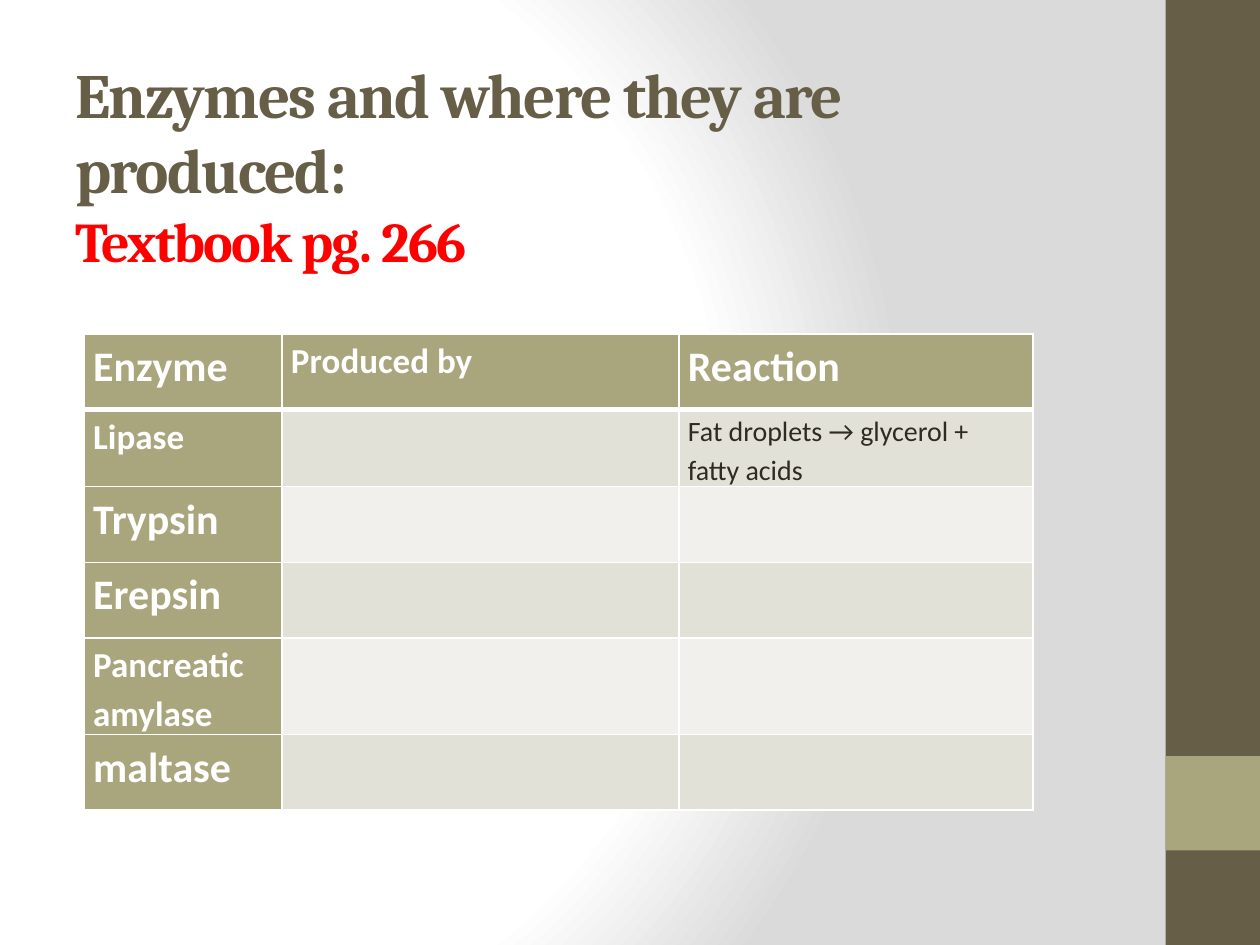
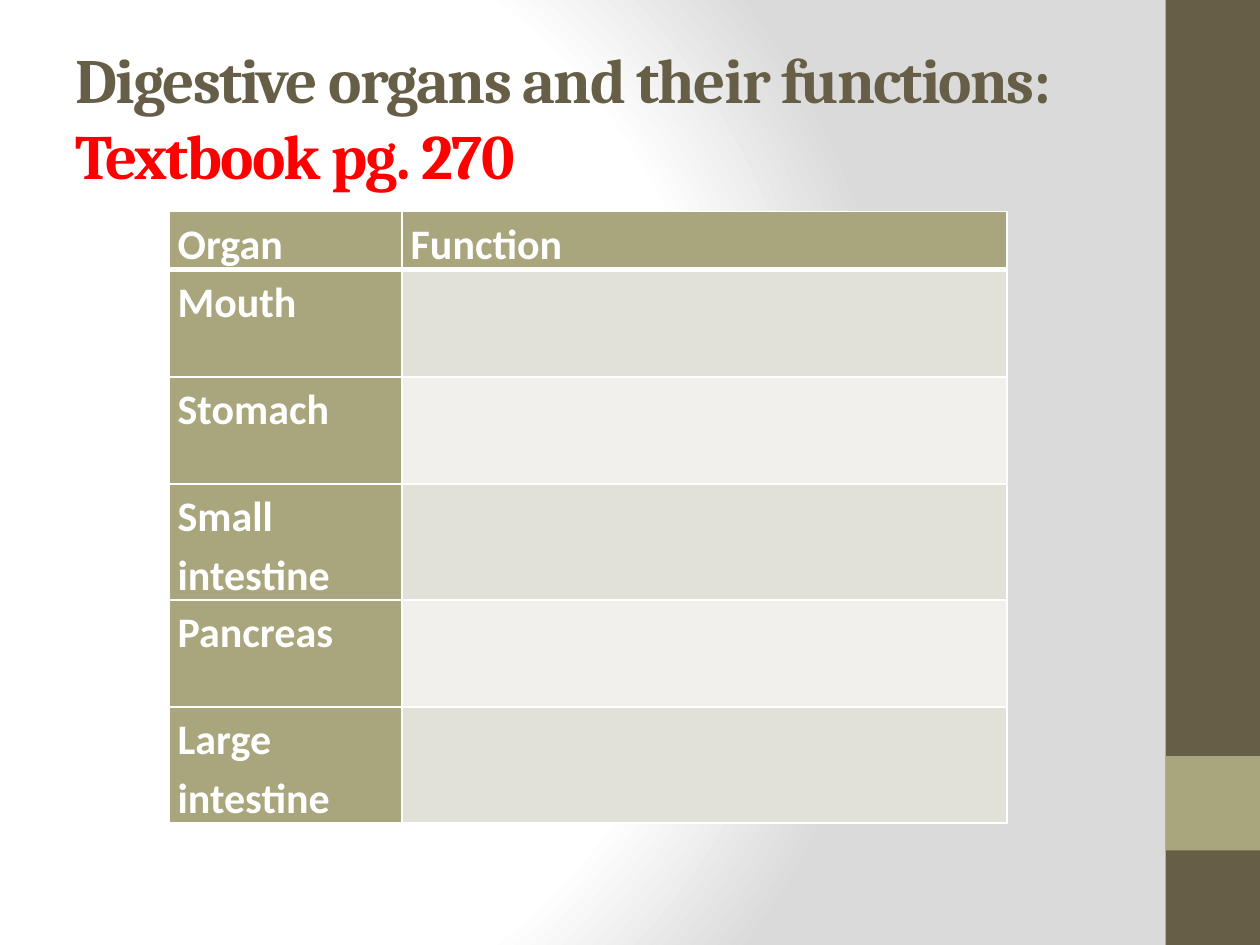
"""Build two worksheet slides about digestive enzymes and organs."""
from dataclasses import dataclass, field

import pptx
import pptx.dml.color
import pptx.enum.shapes
import pptx.enum.text
import pptx.oxml
import pptx.oxml.ns
import pptx.presentation
import pptx.slide
import pptx.table
import pptx.text.text
import pptx.util

RGBColor = pptx.dml.color.RGBColor

GRID_COLUMNS, GRID_ROWS = 40, 30
GRID_UNIT = pptx.util.Inches(0.25)

BROWN = RGBColor(0x67, 0x5E, 0x47)
OLIVE = RGBColor(0xA9, 0xA5, 0x7C)
RED = RGBColor(0xFF, 0x00, 0x00)
WHITE = RGBColor(0xFF, 0xFF, 0xFF)
GREY = RGBColor(0xDA, 0xDA, 0xDA)
INK = RGBColor(0x2F, 0x2B, 0x20)
ROW_FILLS = (RGBColor(0xE2, 0xE1, 0xD7), RGBColor(0xF1, 0xF0, 0xEC))

TITLE_FONT, TABLE_FONT = "Cambria", "Calibri"
HEADING_SIZE, TABLE_SIZE = 36, 24
THIN_BORDER, THICK_BORDER = 1, 3


@dataclass(frozen=True)
class Band:
    """A rectangle of the side stripe, in grid units."""
    left: float
    top: float
    width: float
    height: float
    color: RGBColor


@dataclass(frozen=True)
class Worksheet:
    """A slide with a heading, a textbook reference and a table to fill in."""
    heading: str
    reference: str
    reference_size: int
    title_top: float
    table_left: float
    table_top: float
    column_widths: tuple[float, ...]
    row_heights: tuple[float, ...]
    cells: tuple[tuple[str, ...], ...]
    text_sizes: dict[str, int] = field(default_factory=dict)


BANDS = (
    Band(37, 0, 3, GRID_ROWS, BROWN),
    Band(37, 24, 3, 3, OLIVE),
)

FAT_REACTION = "Fat droplets → glycerol + fatty acids"

WORKSHEETS = (
    Worksheet(
        heading="Enzymes and where they are produced:",
        reference="Textbook pg. 266",
        reference_size=32,
        title_top=2.72,
        table_left=2.68,
        table_top=10.6,
        column_widths=(6.28, 12.6, 11.24),
        row_heights=(2.4,) * 6,
        cells=(
            ("Enzyme", "Produced by", "Reaction"),
            ("Lipase", "", FAT_REACTION),
            ("Trypsin", "", ""),
            ("Erepsin", "", ""),
            ("Pancreatic amylase", "", ""),
            ("maltase", "", ""),
        ),
        text_sizes={"Produced by": 20, "Lipase": 20,
                    "Pancreatic amylase": 20, FAT_REACTION: 16},
    ),
    Worksheet(
        heading="Digestive organs and their functions:",
        reference="Textbook pg. 270",
        reference_size=HEADING_SIZE,
        title_top=1.2,
        table_left=5.36,
        table_top=6.72,
        column_widths=(7.4, 19.2),
        row_heights=(1.64,) + (3.4,) * 5,
        cells=(
            ("Organ", "Function"),
            ("Mouth", ""),
            ("Stomach", ""),
            ("Small intestine", ""),
            ("Pancreas", ""),
            ("Large intestine", ""),
        ),
    ),
)


def grid(units: float) -> int:
    """Turn grid units into a length."""
    return round(units * GRID_UNIT)


def set_background(master: pptx.slide.SlideMaster) -> None:
    """Give every slide a circular gradient from white to grey."""
    master.background.fill.gradient()
    gradient = master.element.find(".//" + pptx.oxml.ns.qn("a:gradFill"))
    stops = "".join(
        f'<a:gs pos="{position * 1000}"><a:srgbClr val="{color}"/></a:gs>'
        for position, color in ((0, WHITE), (75, WHITE), (100, GREY)))
    gradient.getparent().replace(gradient, pptx.oxml.parse_xml(
        f'<a:gradFill {pptx.oxml.ns.nsdecls("a")} rotWithShape="1">'
        f'<a:gsLst>{stops}</a:gsLst><a:path path="circle">'
        '<a:fillToRect l="20000" t="50000" r="100000" b="50000"/>'
        '</a:path></a:gradFill>'))


def add_band(slide: pptx.slide.Slide, band: Band) -> None:
    """Draw one rectangle of the side stripe."""
    shape = slide.shapes.add_shape(
        pptx.enum.shapes.MSO_SHAPE.RECTANGLE, grid(band.left), grid(band.top),
        grid(band.width), grid(band.height))
    shape.shadow.inherit = False
    shape.fill.solid()
    shape.fill.fore_color.rgb = band.color
    shape.line.fill.background()


def add_run(paragraph: pptx.text.text._Paragraph, text: str, font_name: str,
            size: int, color: RGBColor, bold: bool = True) -> pptx.text.text._Run:
    """Append a formatted run to a paragraph."""
    run = paragraph.add_run()
    run.text = text
    run.font.name = font_name
    run.font.size = pptx.util.Pt(size)
    run.font.bold = bold
    run.font.color.rgb = color
    return run


def add_title(slide: pptx.slide.Slide, worksheet: Worksheet) -> None:
    """Write the heading with the textbook reference below it."""
    shape = slide.shapes.add_textbox(
        grid(2), grid(worksheet.title_top), grid(33.32), grid(5))
    frame = shape.text_frame
    frame.word_wrap = True
    frame.vertical_anchor = pptx.enum.text.MSO_ANCHOR.MIDDLE
    paragraph = frame.paragraphs[0]
    heading = add_run(paragraph, worksheet.heading, TITLE_FONT, HEADING_SIZE, BROWN)
    paragraph.add_line_break()
    reference = add_run(paragraph, worksheet.reference, TITLE_FONT,
                        worksheet.reference_size, RED)
    for run in (heading, reference):
        run.font._element.set("spc", "-100")


def set_borders(cell: pptx.table._Cell, top: int, bottom: int) -> None:
    """Draw white borders around a cell."""
    properties = cell._tc.get_or_add_tcPr()
    widths = {"lnL": THIN_BORDER, "lnR": THIN_BORDER, "lnT": top, "lnB": bottom}
    for tag, width in widths.items():
        properties.append(pptx.oxml.parse_xml(
            f'<a:{tag} {pptx.oxml.ns.nsdecls("a")} w="{pptx.util.Pt(width)}">'
            f'<a:solidFill><a:srgbClr val="{WHITE}"/></a:solidFill></a:{tag}>'))


def fill_cell(cell: pptx.table._Cell, row: int, column: int, text: str,
              size: int) -> None:
    """Style one table cell and write its text."""
    is_header = row == 0 or column == 0
    set_borders(cell,
                top=THICK_BORDER if row == 1 else THIN_BORDER,
                bottom=THICK_BORDER if row == 0 else THIN_BORDER)
    cell.fill.solid()
    cell.fill.fore_color.rgb = OLIVE if is_header else ROW_FILLS[(row - 1) % 2]
    if text:
        cell.margin_left = cell.margin_right = pptx.util.Inches(0.07)
        cell.margin_top = cell.margin_bottom = 0
        paragraph = cell.text_frame.paragraphs[0]
        paragraph.line_spacing = 1.15
        add_run(paragraph, text, TABLE_FONT, size,
                WHITE if is_header else INK, is_header)


def add_worksheet_table(slide: pptx.slide.Slide, worksheet: Worksheet) -> None:
    """Draw the table of a worksheet."""
    table = slide.shapes.add_table(
        len(worksheet.row_heights), len(worksheet.column_widths),
        grid(worksheet.table_left), grid(worksheet.table_top),
        grid(sum(worksheet.column_widths)), grid(sum(worksheet.row_heights))).table
    table.first_col = True
    for column, width in zip(table.columns, worksheet.column_widths):
        column.width = grid(width)
    for row, height in zip(table.rows, worksheet.row_heights):
        row.height = grid(height)
    for row_index, texts in enumerate(worksheet.cells):
        for column_index, text in enumerate(texts):
            fill_cell(table.cell(row_index, column_index), row_index, column_index,
                      text, worksheet.text_sizes.get(text, TABLE_SIZE))


def add_worksheet(presentation: pptx.presentation.Presentation,
                  worksheet: Worksheet) -> None:
    """Add one complete worksheet slide."""
    slide = presentation.slides.add_slide(presentation.slide_layouts[6])
    for band in BANDS:
        add_band(slide, band)
    add_title(slide, worksheet)
    add_worksheet_table(slide, worksheet)


def main() -> None:
    """Build and save the presentation."""
    presentation = pptx.Presentation()
    presentation.slide_width = grid(GRID_COLUMNS)
    presentation.slide_height = grid(GRID_ROWS)
    set_background(presentation.slide_master)
    for worksheet in WORKSHEETS:
        add_worksheet(presentation, worksheet)
    presentation.save("out.pptx")


if __name__ == "__main__":
    main()
